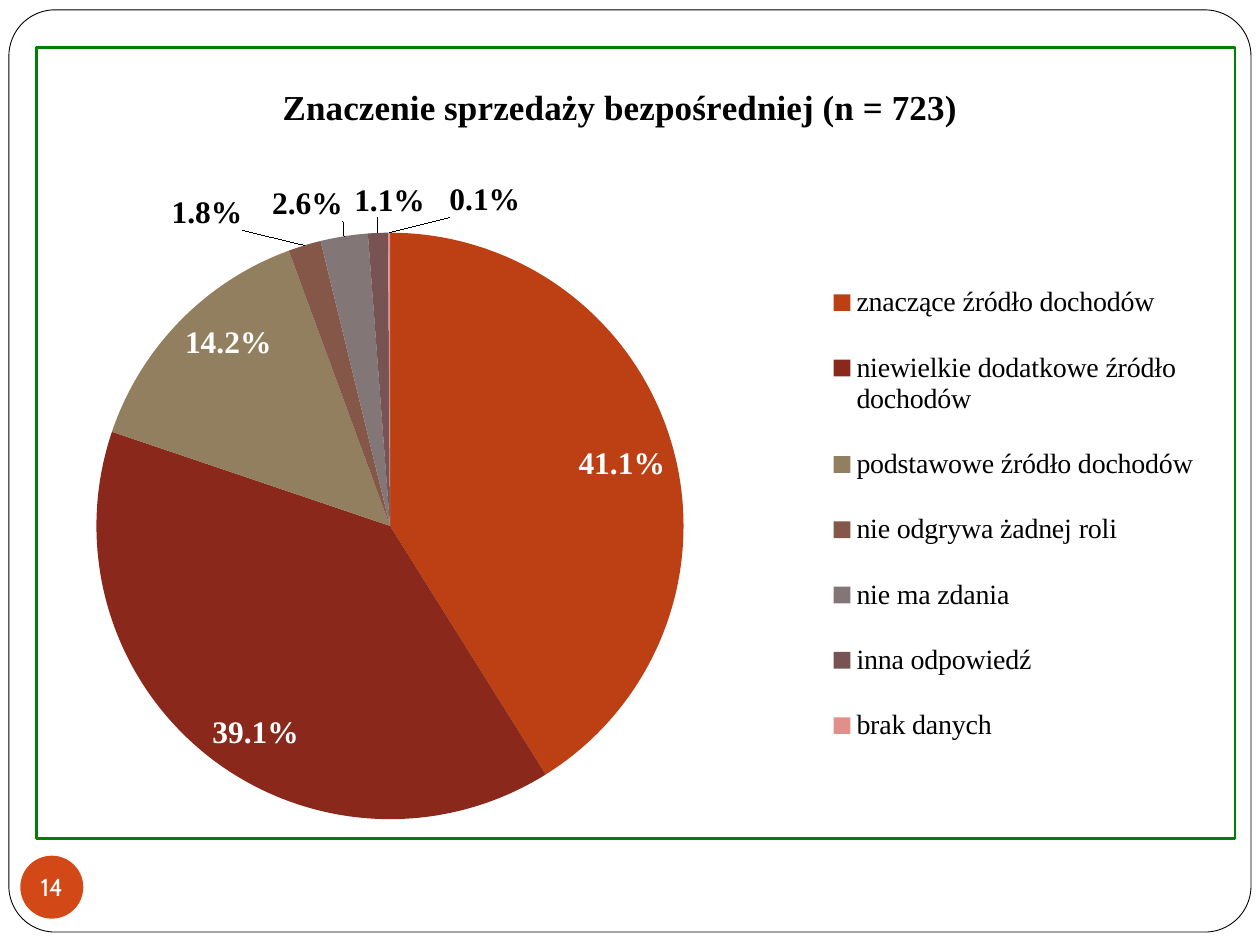
import pptx
import pptx.chart.data
import pptx.dml.color
import pptx.enum.chart
import pptx.enum.shapes
import pptx.enum.text
import pptx.oxml
import pptx.oxml.ns
import pptx.util

Cm, Pt = pptx.util.Cm, pptx.util.Pt
SHAPE = pptx.enum.shapes.MSO_SHAPE
LABEL = pptx.enum.chart.XL_LABEL_POSITION
NS = pptx.oxml.ns.nsdecls("c", "a")

# category, share, slice colour
ANSWERS = [
    ("znaczące źródło dochodów", 0.411, "BC4014"),
    ("niewielkie dodatkowe źródło dochodów", 0.391, "8A281C"),
    ("podstawowe źródło dochodów", 0.142, "917F5F"),
    ("nie odgrywa żadnej roli", 0.018, "855748"),
    ("nie ma zdania", 0.026, "827676"),
    ("inna odpowiedź", 0.011, "775353"),
    ("brak danych", 0.001, "E0908A"),
]
# shift of the outside labels, as a share of the chart's width and height
LABEL_SHIFTS = {3: (-0.05, -0.01), 4: (0, -0.01), 5: (0.01, -0.01), 6: (0.08, -0.01)}


def rgb(color):
    return pptx.dml.color.RGBColor.from_string(color)


def set_font(font, size, color, bold=False, name="Times New Roman"):
    font.size, font.bold, font.name = Pt(size), bold, name
    font.color.rgb = rgb(color)


def layout_xml(x, y, w=None, h=None, inner=False, edge=True):
    """Manual chart layout; without edge, x and y are shifts from the default place."""
    parts = ['<c:layoutTarget val="inner"/>'] if inner else []
    if edge:
        parts += ['<c:xMode val="edge"/>', '<c:yMode val="edge"/>']
    for tag, value in zip("xywh", (x, y, w, h)):
        if value is not None:
            parts.append(f'<c:{tag} val="{value}"/>')
    return pptx.oxml.parse_xml(
        f'<c:layout {NS}><c:manualLayout>{"".join(parts)}</c:manualLayout></c:layout>')


def set_layout(element, before, **kwargs):
    """Replace the element's layout, placing it ahead of the first of the given tags."""
    for old in element.findall(pptx.oxml.ns.qn("c:layout")):
        element.remove(old)
    tags = [pptx.oxml.ns.qn(tag) for tag in before]
    following = next(child for child in element if child.tag in tags)
    following.addprevious(layout_xml(**kwargs))


def add_plain_shape(slide, kind, box, fill):
    sp = slide.shapes.add_shape(kind, *(Cm(v) for v in box))
    sp.shadow.inherit = False
    sp.fill.solid()
    sp.fill.fore_color.rgb = rgb(fill)
    return sp


def add_frame(slide, box):
    sp = add_plain_shape(slide, SHAPE.ROUNDED_RECTANGLE, box, "FFFFFF")
    sp.adjustments[0] = 0.05
    sp.line.color.rgb = rgb("000000")
    sp.line.width = Pt(0.5)


def add_page_number(slide, box, number):
    sp = add_plain_shape(slide, SHAPE.OVAL, box, "D34817")
    sp.line.fill.background()
    tf = sp.text_frame
    tf.margin_left = tf.margin_right = tf.margin_top = tf.margin_bottom = 0
    tf.word_wrap = False
    tf.vertical_anchor = pptx.enum.text.MSO_ANCHOR.MIDDLE
    tf.text = number
    p = tf.paragraphs[0]
    p.alignment = pptx.enum.text.PP_ALIGN.CENTER
    set_font(p.runs[0].font, 14, "FFFFFF", name="Cabin")


def add_title(chart, text):
    tf = chart.chart_title.text_frame
    tf.text = text
    set_font(tf.paragraphs[0].runs[0].font, 20, "000000", bold=True)
    set_layout(chart.chart_title._element, ["c:overlay", "c:spPr", "c:txPr"], x=0.2, y=0.04)
    chart.chart_title.include_in_layout = False


def add_legend(chart):
    chart.has_legend = True
    legend = chart.legend
    legend.position = pptx.enum.chart.XL_LEGEND_POSITION.RIGHT
    legend.include_in_layout = False
    set_font(legend.font, 16, "000000")
    set_layout(legend._element, ["c:overlay"], x=0.65, y=0.26, w=0.33, h=0.66)


def style_slices(series):
    labels = series.data_labels
    labels.show_value = True
    labels.number_format, labels.number_format_is_linked = "0.0%", False
    labels.position = LABEL.INSIDE_END
    set_font(labels.font, 18, "FFFFFF", bold=True)
    for i, (_, _, color) in enumerate(ANSWERS):
        fill = series.points[i].format.fill
        fill.solid()
        fill.fore_color.rgb = rgb(color)
    for i, (dx, dy) in LABEL_SHIFTS.items():
        label = series.points[i].data_label
        set_font(label.font, 18, "000000", bold=True)
        label.position = LABEL.OUTSIDE_END
        d_lbl = label.font._element.getparent().getparent().getparent().getparent()
        set_layout(d_lbl, ["c:spPr", "c:txPr"], x=dx, y=dy, edge=False)
        d_lbl.find(pptx.oxml.ns.qn("c:layout")).addnext(pptx.oxml.parse_xml(
            f'<c:numFmt {NS} formatCode="0.0%" sourceLinked="0"/>'))


def add_pie(slide, box):
    data = pptx.chart.data.CategoryChartData(number_format="0.0%")
    data.categories = [name for name, _, _ in ANSWERS]
    data.add_series("Series 1", [share for _, share, _ in ANSWERS])
    chart = slide.shapes.add_chart(
        pptx.enum.chart.XL_CHART_TYPE.PIE, *(Cm(v) for v in box), data).chart
    set_font(chart.font, 11, "000000")
    add_title(chart, "Znaczenie sprzedaży bezpośredniej (n = 723)")
    add_legend(chart)
    plot = chart.plots[0]
    plot.vary_by_categories = True
    style_slices(plot.series[0])
    root = chart._chartSpace
    set_layout(root.chart.plotArea, ["c:pieChart"],
               x=0.05, y=0.22, w=0.49, h=0.77, inner=True)
    root.chart.addnext(pptx.oxml.parse_xml(
        f'<c:spPr {NS}><a:noFill/><a:ln w="{Pt(1.5)}"><a:solidFill>'
        '<a:srgbClr val="008000"/></a:solidFill></a:ln></c:spPr>'))


def main():
    prs = pptx.Presentation()
    prs.slide_width, prs.slide_height = Cm(25.4), Cm(19.05)
    slide = prs.slides.add_slide(prs.slide_layouts[6])
    add_frame(slide, (0.18, 0.2, 25.04, 18.59))
    add_page_number(slide, (0.41, 17.25, 1.27, 1.27), "14")
    add_pie(slide, (0.71, 0.93, 24.21, 16))
    prs.save("out.pptx")


if __name__ == "__main__":
    main()
